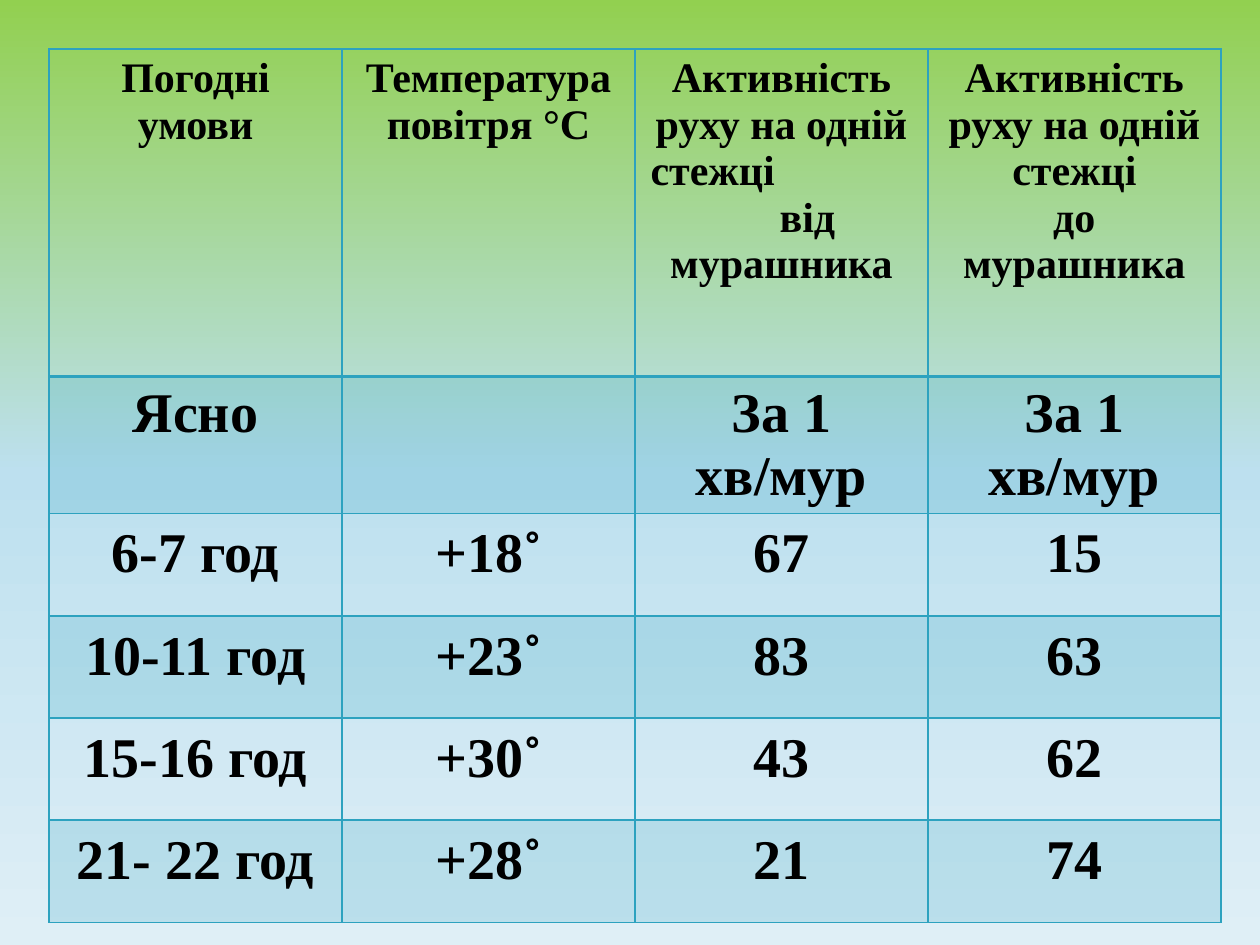
from copy import deepcopy

from pptx import Presentation
from pptx.dml.color import RGBColor
from pptx.enum.text import PP_ALIGN
from pptx.oxml import parse_xml
from pptx.oxml.ns import nsdecls, qn
from pptx.util import Cm, Pt

TEAL = "2DA2BF"


def color(value):
    return RGBColor.from_string(value)


def add_text(tf, text, size=32, align=PP_ALIGN.CENTER, spacing=None, indent=0):
    """Write one paragraph, using the first one while it is still empty."""
    p = tf.paragraphs[0] if not tf.text else tf.add_paragraph()
    if indent:
        p._p.get_or_add_pPr().set("marL", str(Cm(indent)))
    p.alignment = align
    if spacing:
        p.line_spacing = spacing
    r = p.add_run()
    r.text = text
    r.font.name = "Times New Roman"
    r.font.size = Pt(size)
    r.font.bold = True
    r.font.color.rgb = color("000000")


prs = Presentation()
prs.slide_width, prs.slide_height = Cm(25.4), Cm(19.05)
s = prs.slides.add_slide(prs.slide_layouts[6])

# Background: green to pale blue, top to bottom
fill = s.background.fill
fill.gradient()
fill.gradient_angle = 270
stops = s.element.find(".//" + qn("a:gsLst"))
stops.append(deepcopy(stops[-1]))
background = [(0, "92D050"), (0.5, "BDE0EF"), (1, "DFEFF6")]
for stop, (position, value) in zip(fill.gradient_stops, background):
    stop.position = position
    stop.color.rgb = color(value)

# Table grid
heights = [6.6, 2.76] + [2.06] * 4
table = s.shapes.add_table(6, 4, Cm(0.99), Cm(0.99), Cm(23.62), Cm(sum(heights))).table
table.first_row = table.horz_banding = False
for column in table.columns:
    column.width = Cm(5.905)
for row, height in zip(table.rows, heights):
    row.height = Cm(height)

# Header row
headers = [
    [("Погодні умови", {})],
    [("Температура повітря °С", {})],
    [
        ("Активність руху на одній", {}),
        ("стежці", {"align": PP_ALIGN.LEFT, "indent": 0.06}),
        ("від", {"indent": 1.05}),
        ("мурашника", {}),
    ],
    [("Активність руху на одній стежці", {}), ("до", {}), ("мурашника", {})],
]
for col, lines in enumerate(headers):
    for text, options in lines:
        add_text(table.cell(0, col).text_frame, text, size=24, **options)

# Observations
rows = [
    ("Ясно", "", "За 1 хв/мур", "За 1 хв/мур"),
    ("6-7 год", "+18˚", "67", "15"),
    ("10-11 год", "+23˚", "83", "63"),
    ("15-16 год", "+30˚", "43", "62"),
    ("21- 22 год", "+28˚", "21", "74"),
]
for i, values in enumerate(rows, start=1):
    for col, text in enumerate(values):
        cell = table.cell(i, col)
        if i > 1:
            cell.margin_left = cell.margin_right = Cm(0.18)
            cell.margin_top = cell.margin_bottom = 0
        if text:
            add_text(cell.text_frame, text, spacing=1.15 if i > 1 else None)

# Fills and borders: odd rows are tinted, a thicker line closes the header
for i, row in enumerate(table.rows):
    for cell in row.cells:
        if i % 2:
            cell.fill.solid()
            cell.fill.fore_color.rgb = color(TEAL)
            srgb = cell.fill._xPr.find(".//" + qn("a:srgbClr"))
            srgb.append(parse_xml(f'<a:alpha {nsdecls("a")} val="20000"/>'))
        else:
            cell.fill.background()
        widths = {"L": 1, "R": 1, "T": 2 if i == 1 else 1, "B": 2 if i == 0 else 1}
        for n, (side, width) in enumerate(widths.items()):
            cell._tc.get_or_add_tcPr().insert(n, parse_xml(
                f'<a:ln{side} {nsdecls("a")} w="{Pt(width)}"><a:solidFill>'
                f'<a:srgbClr val="{TEAL}"/></a:solidFill></a:ln{side}>'))

prs.save("out.pptx")
